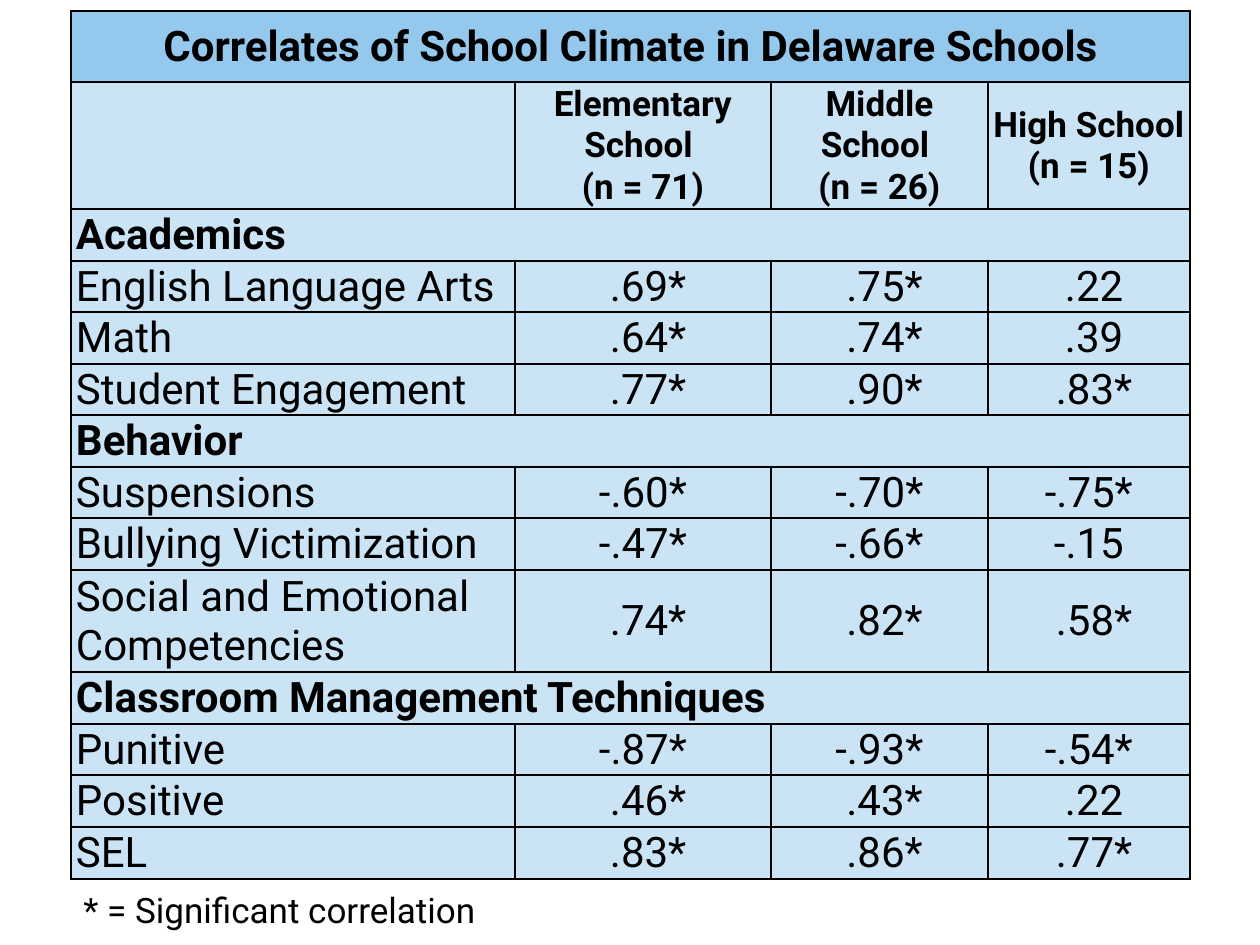
"""Build a slide with a table of school climate correlates by school level."""
from itertools import pairwise

from lxml.etree import SubElement
from pptx import Presentation
from pptx.dml.color import RGBColor
from pptx.enum.text import MSO_ANCHOR, PP_ALIGN
from pptx.oxml.ns import qn
from pptx.util import Pt

PX = 914400 / 126
FONT = "Roboto"
COLORS = {"title": "94C8ED", "body": "CAE4F6", "ink": "000000"}


def px(length):
    return round(length * PX)


def add_text(paragraph, text, size, bold=False):
    run = paragraph.add_run()
    run.text = text
    run.font.name = FONT
    run.font.size = Pt(size)
    run.font.bold = bold
    run.font.color.rgb = RGBColor.from_string(COLORS["ink"])


rows = [
    ["Correlates of School Climate in Delaware Schools"],
    ["", "Elementary School \n(n = 71)", "Middle School \n(n = 26)", "High School\n(n = 15)"],
    ["Academics"],
    ["English Language Arts", " .69*", " .75*", " .22"],
    ["Math", " .64*", " .74*", " .39"],
    ["Student Engagement", " .77*", " .90*", " .83*"],
    ["Behavior"],
    ["Suspensions", "-.60*", "-.70*", "-.75*"],
    ["Bullying Victimization", "-.47*", "-.66*", "-.15"],
    ["Social and Emotional Competencies", " .74*", " .82*", " .58*"],
    ["Classroom Management Techniques"],
    ["Punitive", "-.87*", "-.93*", "-.54*"],
    ["Positive", " .46*", " .43*", " .22"],
    ["SEL", " .83*", " .86*", " .77*"],
]
column_edges = [71, 515, 771, 988, 1190]
row_edges = [11, 82, 209, 261, 312, 364, 415, 467, 518, 570, 672, 724, 775, 827, 879]

presentation = Presentation()
presentation.slide_width = px(1260)
presentation.slide_height = px(945)
slide = presentation.slides.add_slide(presentation.slide_layouts[6])

left, right = column_edges[0], column_edges[-1]
top, bottom = row_edges[0], row_edges[-1]
correlates = slide.shapes.add_table(
    len(rows), 4, px(left), px(top), px(right - left), px(bottom - top)
).table
correlates.first_row = False
correlates.horz_banding = False
for column, (start, end) in zip(correlates.columns, pairwise(column_edges)):
    column.width = px(end - start)
for row, (start, end) in zip(correlates.rows, pairwise(row_edges)):
    row.height = px(end - start)

for r, values in enumerate(rows):
    is_section = len(values) == 1
    if is_section:
        correlates.cell(r, 0).merge(correlates.cell(r, 3))
    for c in range(4):
        cell = correlates.cell(r, c)
        cell.vertical_anchor = MSO_ANCHOR.MIDDLE
        cell.margin_left = cell.margin_right = px(5)
        cell.margin_top = px(1)
        cell.margin_bottom = 0
        for side in ("lnL", "lnR", "lnT", "lnB"):
            border = SubElement(cell._tc.get_or_add_tcPr(), qn(f"a:{side}"), w=str(Pt(1)))
            border_fill = SubElement(border, qn("a:solidFill"))
            SubElement(border_fill, qn("a:srgbClr"), val=COLORS["ink"])
        cell.fill.solid()
        cell.fill.fore_color.rgb = RGBColor.from_string(COLORS["title" if r == 0 else "body"])
        if c >= len(values) or not values[c]:
            continue
        for i, line in enumerate(values[c].split("\n")):
            paragraph = cell.text_frame.add_paragraph() if i else cell.text_frame.paragraphs[0]
            paragraph.alignment = PP_ALIGN.CENTER if r == 0 or c else PP_ALIGN.LEFT
            add_text(paragraph, line, 20 if r == 1 else 24, is_section or r == 1)

footnote = slide.shapes.add_textbox(px(71), px(882), px(588), px(55)).text_frame
footnote.word_wrap = True
add_text(footnote.paragraphs[0], "* = Significant correlation", 20)

presentation.save("out.pptx")
